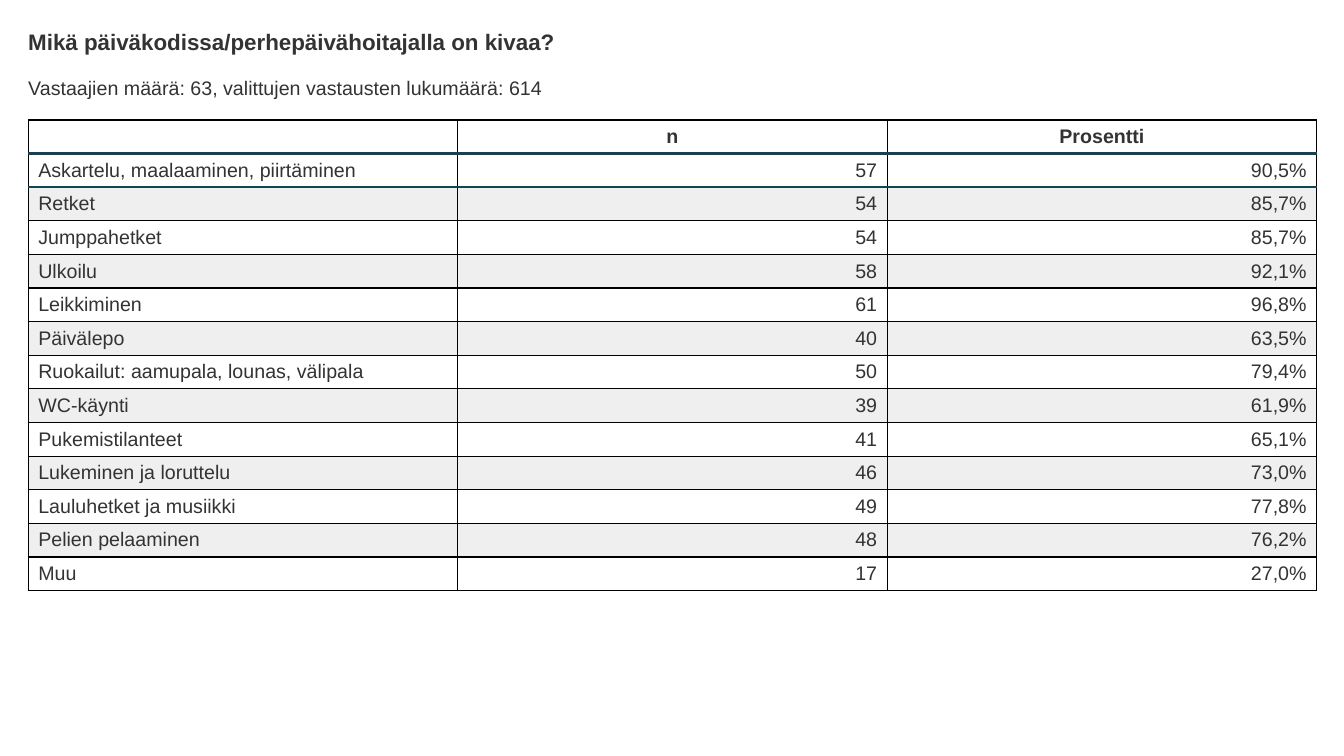
from typing import NamedTuple

from lxml.etree import SubElement
from pptx import Presentation
from pptx.dml.color import RGBColor
from pptx.enum.text import MSO_ANCHOR, MSO_AUTO_SIZE, PP_ALIGN
from pptx.oxml.ns import qn
from pptx.util import Inches, Pt

COLORS = {"text": "333333", "band": "EFEFEF", "white": "FFFFFF",
          "grid": "000000", "accent": "124456"}
LEFT, WIDTH = Inches(0.28), Inches(12.78)
TABLE_TOP, TABLE_HEIGHT = Inches(1.19), Inches(4.67)
HEADER = ("", "n", "Prosentti")


class Answer(NamedTuple):
    label: str
    count: str
    percent: str


class Border(NamedTuple):
    color: str
    width: float


GRID = Border("grid", 1)
ACCENT = Border("accent", 2)

ANSWERS = [
    Answer("Askartelu, maalaaminen, piirtäminen", "57", "90,5%"),
    Answer("Retket", "54", "85,7%"),
    Answer("Jumppahetket", "54", "85,7%"),
    Answer("Ulkoilu", "58", "92,1%"),
    Answer("Leikkiminen", "61", "96,8%"),
    Answer("Päivälepo", "40", "63,5%"),
    Answer("Ruokailut: aamupala, lounas, välipala", "50", "79,4%"),
    Answer("WC-käynti", "39", "61,9%"),
    Answer("Pukemistilanteet", "41", "65,1%"),
    Answer("Lukeminen ja loruttelu", "46", "73,0%"),
    Answer("Lauluhetket ja musiikki", "49", "77,8%"),
    Answer("Pelien pelaaminen", "48", "76,2%"),
    Answer("Muu", "17", "27,0%"),
]


def write(tf, text: str, size: int, bold: bool = False,
          align: PP_ALIGN = PP_ALIGN.LEFT) -> None:
    tf.text = text
    p = tf.paragraphs[0]
    p.alignment = align
    p.font.name = "Arial"
    p.font.size = Pt(size)
    p.font.bold = bold
    p.font.color.rgb = RGBColor.from_string(COLORS["text"])


def write_heading(sp, text: str, size: int, bold: bool = False) -> None:
    tf = sp.text_frame
    tf.margin_left = tf.margin_right = tf.margin_top = tf.margin_bottom = 0
    tf.word_wrap = True
    tf.auto_size = MSO_AUTO_SIZE.SHAPE_TO_FIT_TEXT
    tf.vertical_anchor = MSO_ANCHOR.TOP
    write(tf, text, size, bold)


def set_border(cell, side: str, border: Border) -> None:
    tc_pr = cell._tc.get_or_add_tcPr()
    ln = SubElement(tc_pr, qn(f"a:ln{side}"), w=str(Pt(border.width)))
    fill = SubElement(ln, qn("a:solidFill"))
    SubElement(fill, qn("a:srgbClr"), val=COLORS[border.color])


def format_cell(cell, row: int, col: int, text: str) -> None:
    header = row == 0
    align = PP_ALIGN.CENTER if header else PP_ALIGN.RIGHT if col else PP_ALIGN.LEFT
    write(cell.text_frame, text, 14, header, align)
    cell.vertical_anchor = MSO_ANCHOR.MIDDLE
    cell.margin_top = cell.margin_bottom = Inches(0.02)
    borders = {"L": GRID, "R": GRID,
               "T": ACCENT if row in (1, 2) else GRID,
               "B": ACCENT if row in (0, 1) else GRID}
    for side, border in borders.items():
        set_border(cell, side, border)
    banded = row > 0 and row % 2 == 0
    cell.fill.solid()
    cell.fill.fore_color.rgb = RGBColor.from_string(COLORS["band" if banded else "white"])


def add_answers(s) -> None:
    rows = [HEADER, *ANSWERS]
    table = s.shapes.add_table(len(rows), len(HEADER), LEFT, TABLE_TOP,
                               WIDTH, TABLE_HEIGHT).table
    for r, values in enumerate(rows):
        for c, text in enumerate(values):
            format_cell(table.cell(r, c), r, c, text)


def main() -> None:
    prs = Presentation()
    prs.slide_width, prs.slide_height = Inches(13.33), Inches(7.5)
    s = prs.slides.add_slide(prs.slide_layouts[5])
    title = s.shapes.title
    title.left, title.top = LEFT, Inches(0.28)
    title.width, title.height = WIDTH, Inches(0.27)
    write_heading(title, "Mikä päiväkodissa/perhepäivähoitajalla on kivaa?", 16, True)
    summary = s.shapes.add_textbox(LEFT, Inches(0.75), WIDTH, Inches(0.23))
    write_heading(summary, "Vastaajien määrä: 63, valittujen vastausten lukumäärä: 614", 14)
    add_answers(s)
    prs.save("out.pptx")


if __name__ == "__main__":
    main()
